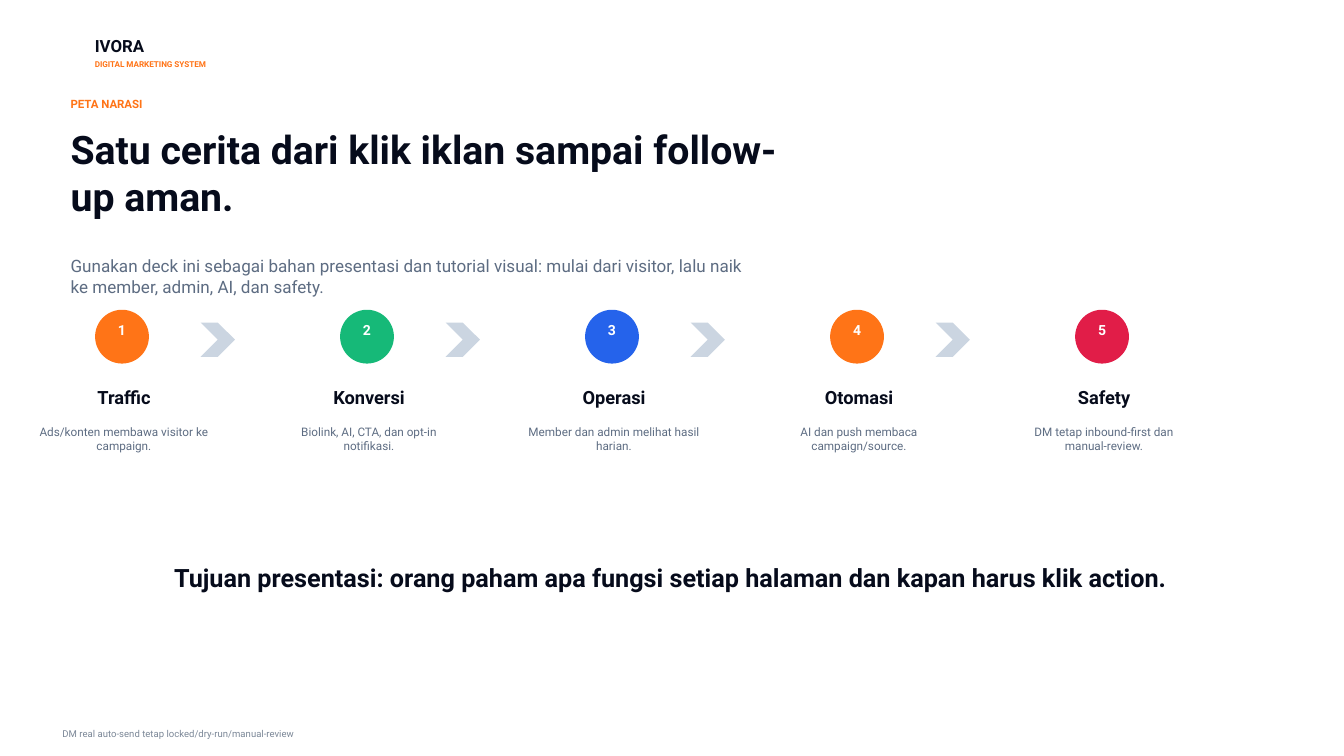
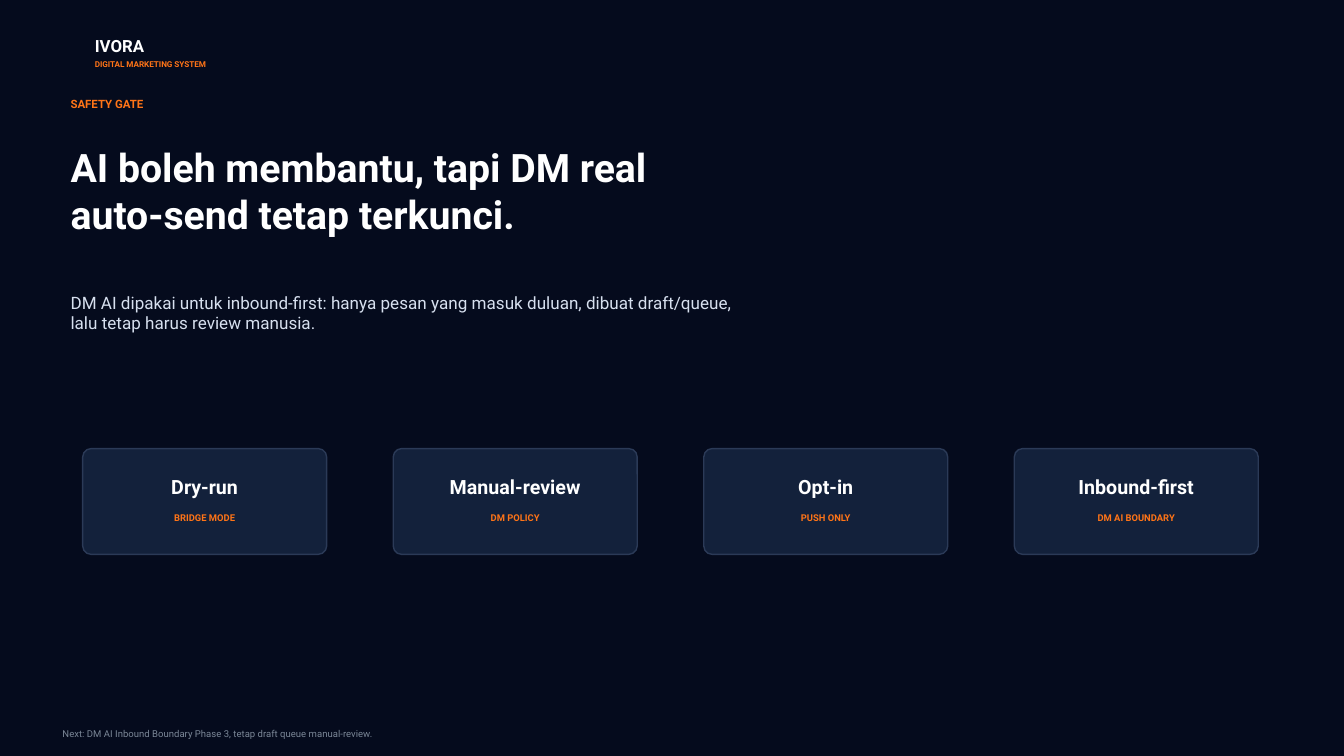
from dataclasses import dataclass
from typing import NamedTuple

from pptx import Presentation
from pptx.dml.color import RGBColor
from pptx.enum import shapes, text
from pptx.util import Inches, Pt

KIND = shapes.MSO_SHAPE


@dataclass(frozen=True)
class Theme:
    font: str = "Roboto"
    white: str = "FFFFFF"
    night: str = "050B1D"
    ink: str = "060B1B"
    slate: str = "5D6C82"
    mist: str = "D7E0EF"
    note: str = "7B8797"
    orange: str = "FF7417"
    green: str = "16B978"
    blue: str = "2563EB"
    red: str = "E11D48"
    arrow: str = "CBD5E1"
    card: str = "13213B"
    edge: str = "2B3A57"
    title: float = 28
    claim: float = 18
    head: float = 14
    step: float = 13
    lead: float = 12.2
    brand: float = 12
    digit: float = 10
    body: float = 8.4
    kicker: float = 8.2
    foot: float = 6.8
    tag: float = 6.7
    motto: float = 5.8


T = Theme()


class Look(NamedTuple):
    back: str
    main: str
    soft: str


class Page(NamedTuple):
    kicker: str
    title: str
    width: float
    height: float
    lead: str
    lead_top: float
    foot: str


class Step(NamedTuple):
    name: str
    body: str
    color: str


class Card(NamedTuple):
    name: str
    tag: str


LIGHT = Look(T.white, T.ink, T.slate)
DARK = Look(T.night, T.white, T.mist)

STORY = Page(
    "PETA NARASI", "Satu cerita dari klik iklan sampai follow-up aman.", 7.3, 0.82,
    "Gunakan deck ini sebagai bahan presentasi dan tutorial visual: mulai dari visitor, "
    "lalu naik ke member, admin, AI, dan safety.", 2.45,
    "DM real auto-send tetap locked/dry-run/manual-review")
SAFETY = Page(
    "SAFETY GATE", "AI boleh membantu, tapi DM real auto-send tetap terkunci.", 6.7, 1.18,
    "DM AI dipakai untuk inbound-first: hanya pesan yang masuk duluan, dibuat draft/queue, "
    "lalu tetap harus review manusia.", 2.81,
    "Next: DM AI Inbound Boundary Phase 3, tetap draft queue manual-review.")

STEPS = [
    Step("Traffic", "Ads/konten membawa visitor ke campaign.", T.orange),
    Step("Konversi", "Biolink, AI, CTA, dan opt-in notifikasi.", T.green),
    Step("Operasi", "Member dan admin melihat hasil harian.", T.blue),
    Step("Otomasi", "AI dan push membaca campaign/source.", T.orange),
    Step("Safety", "DM tetap inbound-first dan manual-review.", T.red),
]
CARDS = [
    Card("Dry-run", "BRIDGE MODE"),
    Card("Manual-review", "DM POLICY"),
    Card("Opt-in", "PUSH ONLY"),
    Card("Inbound-first", "DM AI BOUNDARY"),
]


def rgb(code: str) -> RGBColor:
    return RGBColor.from_string(code)


def write(shape, words: str, *, size: float, color: str, bold: bool = False,
          center: bool = False, gap: float = 0, low: float = 0) -> None:
    """Add a paragraph; low is the bottom inset that lifts centred text."""
    frame = shape.text_frame
    frame.word_wrap = True
    frame.auto_size = text.MSO_AUTO_SIZE.NONE
    frame.vertical_anchor = text.MSO_ANCHOR.MIDDLE
    frame.margin_left = frame.margin_right = frame.margin_top = 0
    frame.margin_bottom = Inches(low)
    para = frame.add_paragraph() if frame.text else frame.paragraphs[0]
    para.alignment = text.PP_ALIGN.CENTER if center else text.PP_ALIGN.LEFT
    para.space_before = Pt(gap)
    run = para.add_run()
    run.text = words
    font = run.font
    font.name, font.size, font.bold = T.font, Pt(size), bold
    font.color.rgb = rgb(color)


def label(slide, x: float, y: float, w: float, h: float, words: str, **form) -> None:
    box = slide.shapes.add_textbox(Inches(x), Inches(y), Inches(w), Inches(h))
    write(box, words, **form)


def draw(slide, kind, x: float, y: float, w: float, h: float, fill: str, line: str = ""):
    shape = slide.shapes.add_shape(kind, Inches(x), Inches(y), Inches(w), Inches(h))
    shape.shadow.inherit = False
    shape.fill.solid()
    shape.fill.fore_color.rgb = rgb(fill)
    if line:
        shape.line.color.rgb = rgb(line)
        shape.line.width = Pt(1)
    else:
        shape.line.fill.background()
    return shape


def start(deck, page: Page, look: Look):
    """Add a slide with its background, brand name, heading and footer."""
    slide = deck.slides.add_slide(deck.slide_layouts[5])
    fill = slide.background.fill
    fill.solid()
    fill.fore_color.rgb = rgb(look.back)
    title = slide.shapes.title
    title.left, title.top = Inches(0.7), Inches(1.3)
    title.width, title.height = Inches(page.width), Inches(page.height)
    write(title, page.title, size=T.title, color=look.main, bold=True)
    label(slide, 0.94, 0.35, 1.35, 0.2, "IVORA", size=T.brand, color=look.main, bold=True)
    label(slide, 0.94, 0.58, 2.4, 0.12, "DIGITAL MARKETING SYSTEM",
          size=T.motto, color=T.orange, bold=True)
    label(slide, 0.7, 0.95, 6.7, 0.16, page.kicker,
          size=T.kicker, color=T.orange, bold=True)
    label(slide, 0.7, page.lead_top, 6.7, 0.58, page.lead, size=T.lead, color=look.soft)
    label(slide, 0.62, 7.21, 8.6, 0.14, page.foot, size=T.foot, color=T.note)
    return slide


def story(deck) -> None:
    slide = start(deck, STORY, LIGHT)
    for i, step in enumerate(STEPS):
        x = 0.95 + 2.43 * i
        dot = draw(slide, KIND.OVAL, x, 3.08, 0.52, 0.52, step.color, step.color)
        write(dot, str(i + 1), size=T.digit, color=T.white, bold=True, center=True, low=0.14)
        label(slide, x - 0.36, 3.85, 1.28, 0.18, step.name,
              size=T.step, color=T.ink, bold=True, center=True)
        label(slide, x - 0.62, 4.18, 1.8, 0.35, step.body,
              size=T.body, color=T.slate, center=True)
        if i < len(STEPS) - 1:
            draw(slide, KIND.CHEVRON, x + 1.04, 3.2, 0.34, 0.34, T.arrow)
    label(slide, 1.15, 5.58, 11, 0.3,
          "Tujuan presentasi: orang paham apa fungsi setiap halaman dan kapan harus klik action.",
          size=T.claim, color=T.ink, bold=True, center=True)


def safety(deck) -> None:
    slide = start(deck, SAFETY, DARK)
    for i, card in enumerate(CARDS):
        box = draw(slide, KIND.ROUNDED_RECTANGLE, 0.82 + 3.08 * i, 4.45, 2.42, 1.05,
                   T.card, T.edge)
        box.adjustments[0] = 0.08
        write(box, card.name, size=T.head, color=T.white, bold=True, center=True)
        write(box, card.tag, size=T.tag, color=T.orange, bold=True, center=True,
              gap=10, low=0.04)


def main() -> None:
    deck = Presentation()
    deck.slide_width, deck.slide_height = Inches(13.33), Inches(7.5)
    story(deck)
    safety(deck)
    deck.save("out.pptx")


if __name__ == "__main__":
    main()
